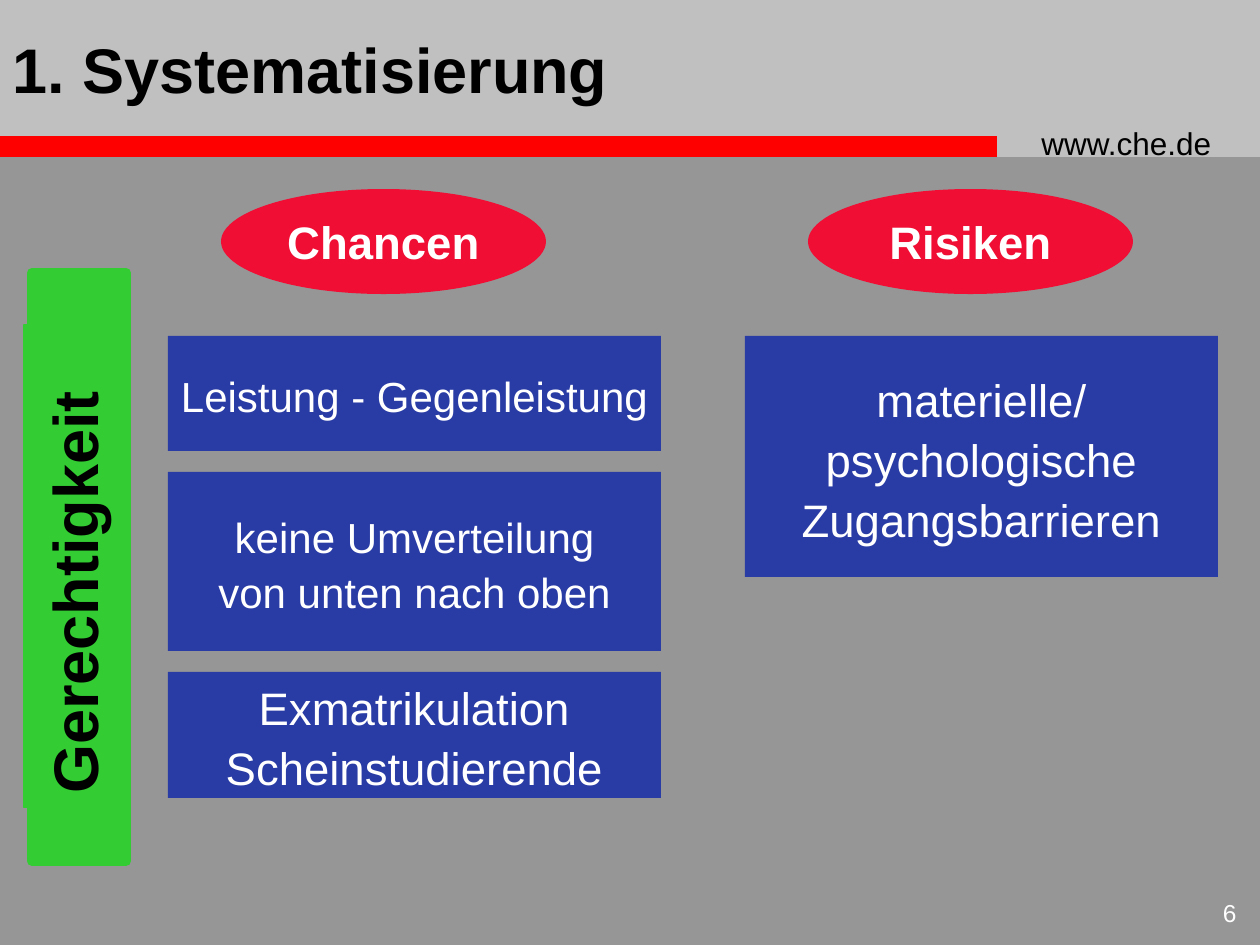
from pptx import Presentation
from pptx.dml.color import RGBColor
from pptx.enum.shapes import MSO_SHAPE
from pptx.enum.text import MSO_ANCHOR, PP_ALIGN
from pptx.util import Pt

PX = 914400 // 126
COLORS = {"page": "969696", "header": "C0C0C0", "rule": "FF0000", "side": "33CC33",
          "oval": "F00E34", "card": "293BA5", "dark": "000000", "light": "FFFFFF"}


def color(name):
    return RGBColor.from_string(COLORS[name])


def emu(*lengths):
    return [length * PX for length in lengths]


def write(shape, lines, size, ink, bold=False, align=PP_ALIGN.CENTER,
          anchor=MSO_ANCHOR.MIDDLE, spacing=None, wrap=False):
    frame = shape.text_frame
    frame.word_wrap = wrap
    frame.vertical_anchor = anchor
    for index, line in enumerate(lines):
        para = frame.add_paragraph() if index else frame.paragraphs[0]
        para.alignment = align
        if spacing:
            para.line_spacing = spacing
        span = para.add_run()
        span.text = line
        span.font.name = "Arial"
        span.font.size = Pt(size)
        span.font.bold = bold
        span.font.color.rgb = color(ink)


def add_block(page, kind, box, fill, line_width=None):
    shape = page.shapes.add_shape(kind, *emu(*box))
    shape.shadow.inherit = False
    shape.fill.solid()
    shape.fill.fore_color.rgb = color(fill)
    if line_width:
        shape.line.color.rgb = color(fill)
        shape.line.width = Pt(line_width)
    else:
        shape.line.fill.background()
    return shape


def add_header(page, box):
    left, top, width, height = box
    add_block(page, MSO_SHAPE.RECTANGLE, box, "header")
    add_block(page, MSO_SHAPE.RECTANGLE, (left, top + height - 21, 997, 21), "rule")
    address = page.shapes.add_textbox(*emu(left + 1029, top + 118, 220, 50))
    write(address, ["www.che.de"], 18, "dark", align=PP_ALIGN.LEFT, anchor=MSO_ANCHOR.TOP)
    title = page.shapes.title
    title.left, title.top, title.width, title.height = emu(left, top, 1018, height - 21)
    write(title, ["1. Systematisierung"], 36, "dark", True, PP_ALIGN.LEFT, wrap=True)
    # The title placeholder comes first on the page; bring it in front of the band.
    page.shapes._spTree.append(title._element)


def add_side_label(page, box, text):
    """Draw a bar with a slightly wider panel whose text reads upwards."""
    left, top, width, height = box
    add_block(page, MSO_SHAPE.RECTANGLE, box, "side", 6)
    panel = add_block(page, MSO_SHAPE.RECTANGLE,
                      (left - 8, top + 52, width + 8, height - 105), "side", 0.75)
    write(panel, [text], 36, "dark", True, anchor=MSO_ANCHOR.TOP, wrap=True)
    frame = panel.text_frame
    frame._txBody.bodyPr.set("vert", "vert270")
    frame.margin_left, frame.margin_right = emu(12, 0)
    frame.margin_top, frame.margin_bottom = emu(58, 6)


def add_column(page, box, heading, oval_offset, cards):
    """Stack cards of (height, size, lines) under an oval heading."""
    left, top, width = box
    oval = add_block(page, MSO_SHAPE.OVAL, (left + oval_offset, top, 325, 105), "oval")
    write(oval, [heading], 26, "light", True)
    card_top = top + 147
    for height, size, lines in cards:
        card = add_block(page, MSO_SHAPE.RECTANGLE, (left, card_top, width, height), "card")
        write(card, lines, size, "light", spacing=1.1)
        card_top += height + 21


def add_page_number(page, box, number):
    shape = page.shapes.add_textbox(*emu(*box))
    write(shape, [number], 14, "light", align=PP_ALIGN.RIGHT,
          anchor=MSO_ANCHOR.TOP, wrap=True)


def main():
    deck = Presentation()
    deck.slide_width, deck.slide_height = emu(1260, 945)
    page = deck.slides.add_slide(deck.slide_layouts[5])
    page.background.fill.solid()
    page.background.fill.fore_color.rgb = color("page")

    add_header(page, (0, 0, 1260, 157))
    add_side_label(page, (32, 273, 94, 588), "Gerechtigkeit")
    add_column(page, (168, 189, 493), "Chancen", 53, [
        (115, 24, ["Leistung - Gegenleistung"]),
        (179, 24, ["keine Umverteilung", "von unten nach oben"]),
        (126, 26, ["Exmatrikulation", "Scheinstudierende"]),
    ])
    add_column(page, (745, 189, 473), "Risiken", 63, [
        (241, 26, ["materielle/", "psychologische", "Zugangsbarrieren"]),
    ])
    add_page_number(page, (1176, 892, 73, 53), "6")
    deck.save("out.pptx")


if __name__ == "__main__":
    main()
